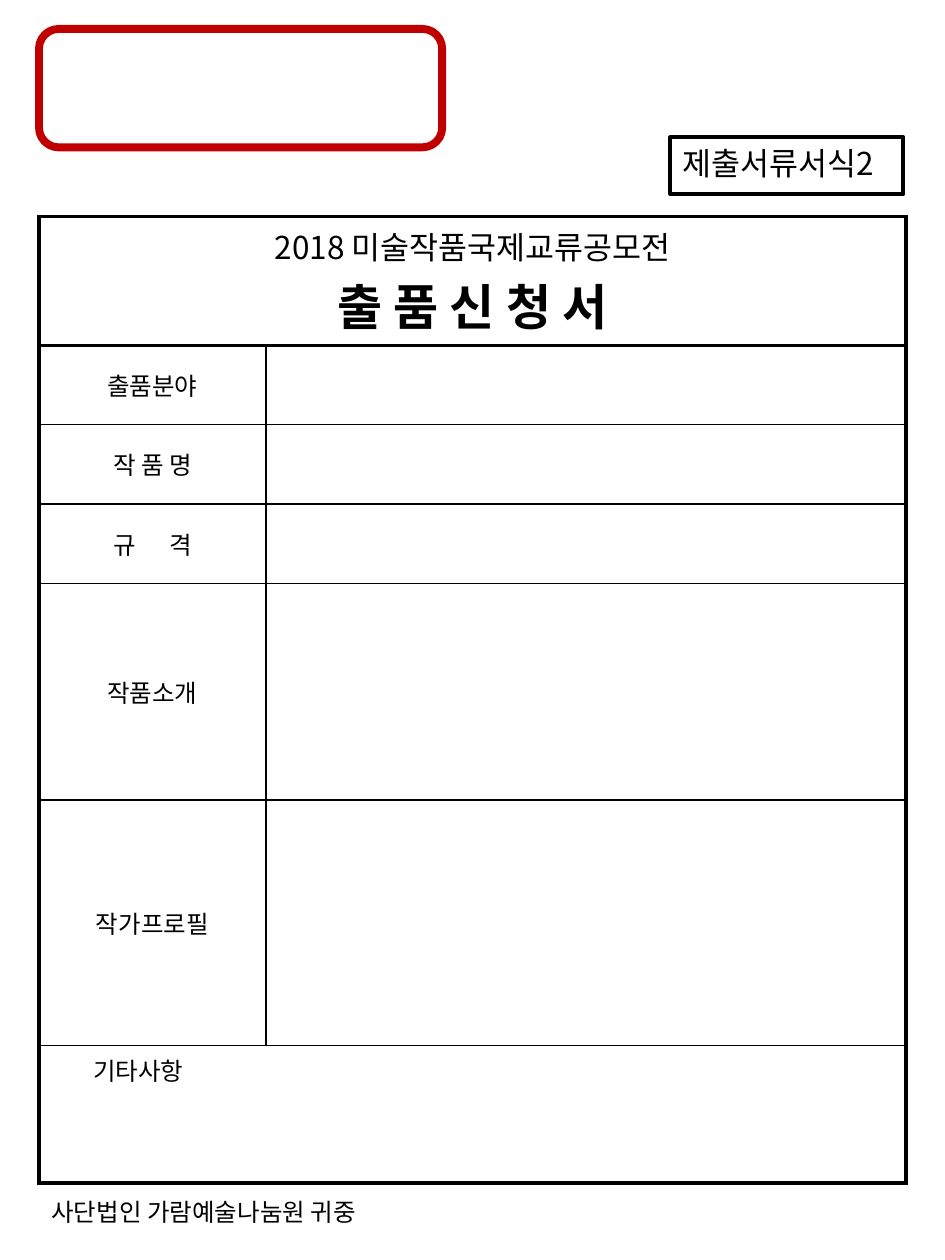
"""Build the entry application form for an international art exchange exhibition."""
from lxml import etree
from pptx import Presentation
from pptx.dml.color import RGBColor
from pptx.enum.shapes import MSO_SHAPE
from pptx.enum.text import MSO_ANCHOR, MSO_AUTO_SIZE, PP_ALIGN
from pptx.oxml.ns import qn
from pptx.util import Inches, Pt

RECT, ROUNDED = MSO_SHAPE.RECTANGLE, MSO_SHAPE.ROUNDED_RECTANGLE
LEFT, CENTER = PP_ALIGN.LEFT, PP_ALIGN.CENTER
TOP, MIDDLE = MSO_ANCHOR.TOP, MSO_ANCHOR.MIDDLE
GROW = MSO_AUTO_SIZE.SHAPE_TO_FIT_TEXT

THEME = {
    "font": "Noto Sans CJK KR", "ink": "000000", "red": "C00000",
    "body": 14, "heading": 18, "title": 28,
    "thick": 2.25, "thin": 1, "badge": 4.5,
}

FORM_CODE = "제출서류서식2"
RECIPIENT = "사단법인 가람예술나눔원 귀중"
HEADER = [([("2018 미술작품국제교류공모전", 0)], "heading", False),
          ([("출 품 신 청 서", 0)], "title", True)]
FIELDS = [
    ([("출품분야", 0)], 0.63),
    ([("작 품 명", 0)], 0.63),
    ([("규", 0), (" ", 16), ("격", 0)], 0.63),
    ([("작품소개", 0)], 1.72),
    ([("작가프로필", 0)], 1.95),
]
REMARKS = [("기타사항", 0)]
HEADER_HEIGHT, REMARKS_HEIGHT = 1.02, 1.09
COLUMNS = [1.8, 5.08]
MARGIN, TABLE_TOP = 0.31, 1.72


def add_run(p, text, size, bold=False, spacing=0):
    r = p.add_run()
    r.text = text
    r.font.size = Pt(THEME[size])
    r.font.bold = bold
    r.font.color.rgb = RGBColor.from_string(THEME["ink"])
    r.font.name = THEME["font"]
    props = r._r.get_or_add_rPr()
    etree.SubElement(props, qn("a:ea")).set("typeface", THEME["font"])
    if spacing:
        props.set("spc", str(int(spacing * 100)))


def add_text(s, text, size, *box):
    sp = s.shapes.add_textbox(*map(Inches, box))
    tf = sp.text_frame
    tf.word_wrap = False
    tf.auto_size = GROW
    add_run(tf.paragraphs[0], text, size)


def add_frame(s, kind, color, width, *box):
    sp = s.shapes.add_shape(kind, *map(Inches, box))
    sp.shadow.inherit = False
    sp.fill.background()
    sp.line.color.rgb = RGBColor.from_string(THEME[color])
    sp.line.width = Pt(THEME[width])


def fill_cell(cell, lines, align, anchor):
    cell.vertical_anchor = anchor
    tf = cell.text_frame
    for i, (parts, size, bold) in enumerate(lines):
        p = tf.add_paragraph() if i else tf.paragraphs[0]
        p.alignment = align
        for text, spacing in parts:
            add_run(p, text, size, bold, spacing)


def set_borders(cell, widths):
    props = cell._tc.get_or_add_tcPr()
    for i, (side, width) in enumerate(zip("LRTB", widths)):
        line = etree.Element(qn(f"a:ln{side}"), w=str(Pt(THEME[width])))
        fill = etree.SubElement(line, qn("a:solidFill"))
        etree.SubElement(fill, qn("a:srgbClr"), val=THEME["ink"])
        props.insert(i, line)


def add_form(s):
    heights = [HEADER_HEIGHT, *(h for _, h in FIELDS), REMARKS_HEIGHT]
    last = len(heights) - 1
    box = (MARGIN, TABLE_TOP, sum(COLUMNS), sum(heights))
    table = s.shapes.add_table(len(heights), 2, *map(Inches, box)).table
    table.first_row = table.horz_banding = False
    for column, width in zip(table.columns, COLUMNS):
        column.width = Inches(width)
    for i, height in enumerate(heights):
        table.rows[i].height = Inches(height)
        spanned = i in (0, last)
        for j in range(2):
            cell = table.cell(i, j)
            cell.fill.background()
            set_borders(cell, [
                "thick" if j == 0 or spanned else "thin",
                "thick" if j == 1 or spanned else "thin",
                "thick" if i < 2 else "thin",
                "thick" if spanned else "thin",
            ])
        if spanned:
            table.cell(i, 0).merge(table.cell(i, 1))
    fill_cell(table.cell(0, 0), HEADER, CENTER, TOP)
    for i, (label, _) in enumerate(FIELDS, 1):
        fill_cell(table.cell(i, 0), [(label, "body", False)], CENTER, MIDDLE)
    remarks = table.cell(last, 0)
    remarks.margin_left = Inches(0.43)
    fill_cell(remarks, [(REMARKS, "body", False)], LEFT, TOP)


def main():
    prs = Presentation()
    prs.slide_width, prs.slide_height = Inches(7.5), Inches(10)
    s = prs.slides.add_slide(prs.slide_layouts[6])
    add_text(s, FORM_CODE, "heading", 5.32, 1.09, 1.86, 0.4)
    add_frame(s, RECT, "ink", "thick", 5.32, 1.09, 1.85, 0.45)
    add_form(s)
    add_text(s, RECIPIENT, "body", MARGIN, 9.45, 2.88, 0.34)
    add_frame(s, ROUNDED, "red", "badge", MARGIN, 0.23, 3.2, 0.94)
    prs.save("out.pptx")


if __name__ == "__main__":
    main()
